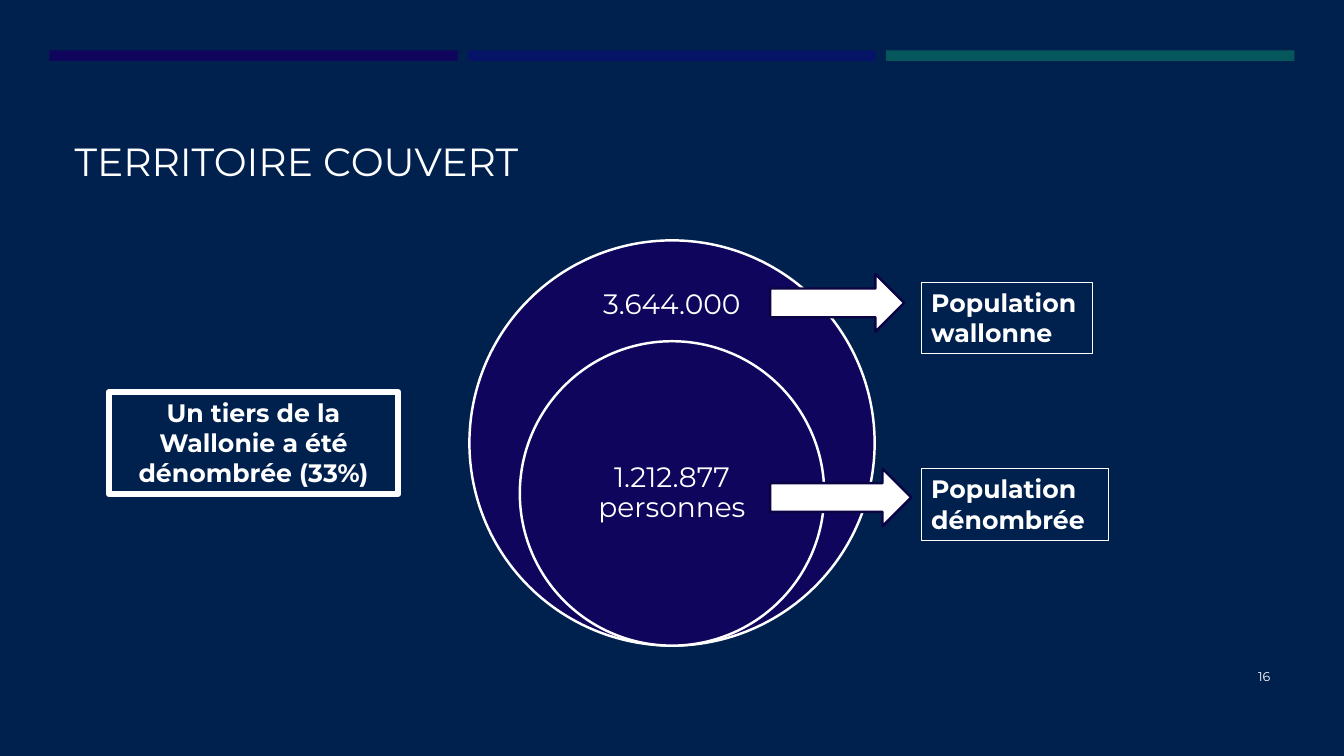
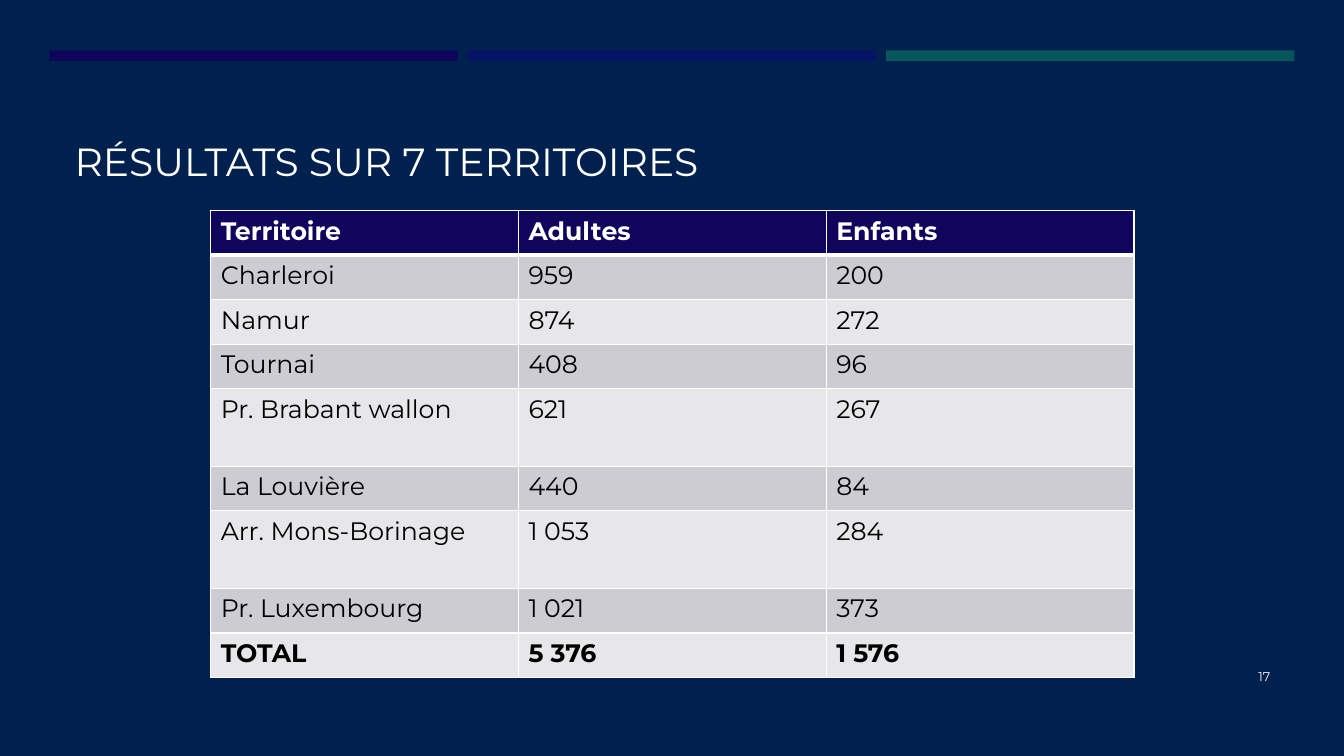
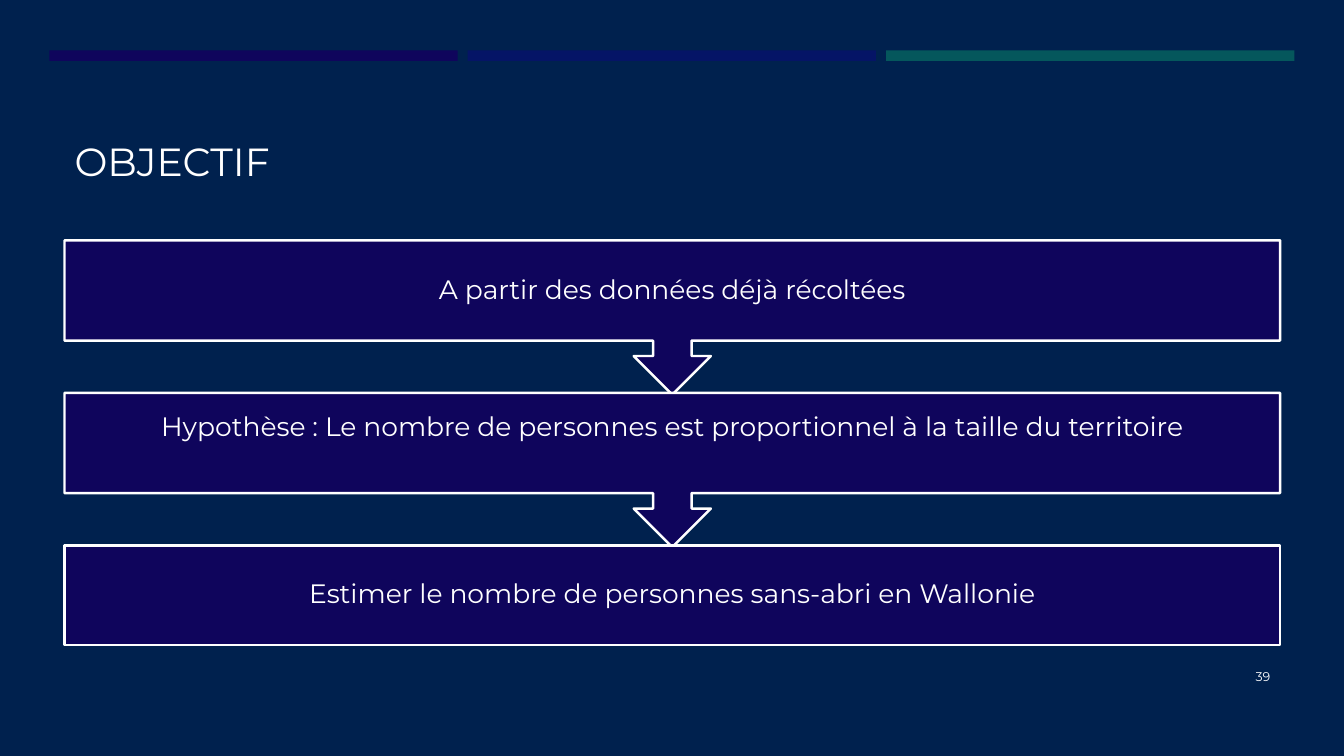
from pptx import Presentation
from pptx.dml.color import RGBColor
from pptx.enum.shapes import MSO_SHAPE
from pptx.enum.text import MSO_ANCHOR, MSO_AUTO_SIZE, PP_ALIGN
from pptx.oxml.ns import qn
from pptx.util import Inches, Pt
from lxml import etree

RECTANGLE, ELLIPSE = MSO_SHAPE.RECTANGLE, MSO_SHAPE.OVAL
RIGHT_ARROW, CALLOUT = MSO_SHAPE.RIGHT_ARROW, MSO_SHAPE.DOWN_ARROW_CALLOUT
TOP, MIDDLE, BOTTOM = MSO_ANCHOR.TOP, MSO_ANCHOR.MIDDLE, MSO_ANCHOR.BOTTOM
LEFT, CENTER, RIGHT = PP_ALIGN.LEFT, PP_ALIGN.CENTER, PP_ALIGN.RIGHT
NO_AUTOFIT = MSO_AUTO_SIZE.NONE

NAVY = RGBColor(0x00, 0x21, 0x4E)
INDIGO = RGBColor(0x0F, 0x05, 0x5C)
DARK_INDIGO = RGBColor(0x0B, 0x04, 0x44)
BLUE = RGBColor(0x05, 0x14, 0x66)
TEAL = RGBColor(0x05, 0x57, 0x5C)
WHITE = RGBColor(0xFF, 0xFF, 0xFF)
BLACK = RGBColor(0x00, 0x00, 0x00)
GREY = RGBColor(0xCC, 0xCC, 0xD2)
LIGHT_GREY = RGBColor(0xE7, 0xE7, 0xEA)

FONT = "Montserrat"
COLUMNS, ROWS = 133.33, 75  # grid of square cells
CELL = Inches(0.1)
MARGIN, CONTENT_WIDTH = 6.4, 120.6
CENTER_COLUMN = COLUMNS / 2


def grid(*lengths):
    """Turn grid columns or rows into slide lengths."""
    return [round(length * CELL) for length in lengths]


class Deck:
    """The shared style and the slide being built."""

    def __init__(self):
        self.deck = Presentation()
        self.deck.slide_width, self.deck.slide_height = grid(COLUMNS, ROWS)
        background = self.deck.slide_master.background.fill
        background.solid()
        background.fore_color.rgb = NAVY
        self.slide = None

    def new_slide(self, title, number):
        self.slide = self.deck.slides.add_slide(self.deck.slide_layouts[5])
        # Three coloured bands
        for index, color in enumerate((INDIGO, BLUE, TEAL)):
            self.shape(RECTANGLE, 4.9 + index * 41.5, 5, 40.5, 1.05, fill=color)
        # Title and page number
        heading = self.slide.shapes.title
        heading.left, heading.top, heading.width, heading.height = grid(
            MARGIN, 7.7, CONTENT_WIDTH, 11.1)
        self.fill_text(heading.text_frame, title, 28, anchor=BOTTOM)
        self.text(str(number), 115.5, 65.1, 11.5, 4, 9, align=RIGHT)

    def fill_text(self, frame, text, size, color=WHITE, bold=False, align=LEFT,
                  anchor=MIDDLE, inset=None, spacing=None):
        frame.word_wrap = True
        frame.auto_size = NO_AUTOFIT
        frame.vertical_anchor = anchor
        if inset is not None:
            (frame.margin_left, frame.margin_top,
             frame.margin_right, frame.margin_bottom) = grid(*[inset] * 4)
        frame.text = text
        for para in frame.paragraphs:
            para.alignment = align
            if spacing:
                para.line_spacing = spacing
            self.style_runs(para, size, color, bold)

    def style_runs(self, para, size, color, bold):
        for span in para.runs:
            span.font.name = FONT
            span.font.size = Pt(size)
            span.font.bold = bold
            span.font.color.rgb = color

    def text(self, text, left, top, width, height, size, **style):
        box = self.slide.shapes.add_textbox(*grid(left, top, width, height))
        self.fill_text(box.text_frame, text, size, **style)

    def shape(self, kind, left, top, width, height, fill=None, line=None,
              weight=1.75):
        shape = self.slide.shapes.add_shape(kind, *grid(left, top, width, height))
        shape.shadow.inherit = False
        if fill is None:
            shape.fill.background()
        else:
            shape.fill.solid()
            shape.fill.fore_color.rgb = fill
        if line is None:
            shape.line.fill.background()
        else:
            shape.line.color.rgb = line
            shape.line.width = Pt(weight)
        return shape

    def label(self, text, left, top, width, height, weight=0.75, align=LEFT):
        box = self.shape(RECTANGLE, left, top, width, height, line=WHITE,
                         weight=weight)
        self.fill_text(box.text_frame, text, 18, bold=True, align=align, anchor=TOP)

    def circle(self, diameter, bottom):
        return self.shape(ELLIPSE, CENTER_COLUMN - diameter / 2,
                          bottom - diameter, diameter, diameter, INDIGO, WHITE)

    def table(self, rows, left, top, width, heights):
        count = len(rows[0])
        table = self.slide.shapes.add_table(
            len(rows), count, *grid(left, top, width, sum(heights))).table
        table.first_row = table.horz_banding = False
        for column in table.columns:
            column.width = grid(width / count)[0]
        for index, (row, height) in enumerate(zip(rows, heights)):
            table.rows[index].height = grid(height)[0]
            header, total = index == 0, index == len(rows) - 1
            fill = INDIGO if header else GREY if index % 2 else LIGHT_GREY
            for column, value in enumerate(row):
                cell = table.cell(index, column)
                self.borders(cell, L=1, R=1, T=3 if index == 1 else 1,
                             B=3 if header else 1)
                cell.fill.solid()
                cell.fill.fore_color.rgb = fill
                cell.text_frame.text = value
                self.style_runs(cell.text_frame.paragraphs[0], 18,
                                WHITE if header else BLACK, header or total)

    def borders(self, cell, **weights):
        properties = cell._tc.get_or_add_tcPr()
        for side, weight in weights.items():
            line = etree.SubElement(properties, qn("a:ln" + side), w=str(Pt(weight)))
            fill = etree.SubElement(line, qn("a:solidFill"))
            etree.SubElement(fill, qn("a:srgbClr"), val=str(WHITE))


def territory_slide(deck):
    deck.new_slide("TERRITOIRE COUVERT", 16)
    # Nested populations
    bottom = 64.05
    deck.circle(40.2, bottom)
    deck.text("3.644.000", 56.1, 26.9, 21.1, 6.8, 20, align=CENTER,
              inset=1.6, spacing=0.9)
    counted = deck.circle(30.2, bottom)
    deck.fill_text(counted.text_frame, "1.212.877 personnes", 20, align=CENTER,
                   inset=1.6, spacing=0.9)
    # Arrows and their labels
    for text, arrow_top, arrow_width, label_top, label_width in (
            ("Population wallonne", 27.2, 13.3, 28, 17),
            ("Population dénombrée", 46.5, 14, 46.5, 18.6)):
        deck.shape(RIGHT_ARROW, 76.4, arrow_top, arrow_width, 5.7, WHITE, DARK_INDIGO)
        deck.label(text, 91.4, label_top, label_width, 7.1)
    # Conclusion
    deck.label("Un tiers de la Wallonie a été dénombrée (33%)",
               10.8, 38.9, 28.7, 10.1, weight=4.5, align=CENTER)


def results_slide(deck):
    deck.new_slide("RÉSULTATS SUR 7 TERRITOIRES", 17)
    rows = (
        ("Territoire", "Adultes", "Enfants"),
        ("Charleroi", "959", "200"),
        ("Namur", "874", "272"),
        ("Tournai", "408", "96"),
        ("Pr. Brabant wallon", "621", "267"),
        ("La Louvière", "440", "84"),
        ("Arr. Mons-Borinage", "1 053", "284"),
        ("Pr. Luxembourg", "1 021", "373"),
        ("TOTAL", "5 376", "1 576"),
    )
    tall_rows = (4, 6)
    heights = [7.7 if index in tall_rows else 4.42 for index in range(len(rows))]
    deck.table(rows, 20.9, 20.9, 91.6, heights)


def objective_slide(deck):
    deck.new_slide("OBJECTIF", 39)
    first_top, step = 23.85, 15.13
    # Steps, with the first two pointing to the next
    for index, (text, kind, height, lift) in enumerate((
            ("A partir des données déjà récoltées", CALLOUT, 15.3, 0),
            ("Hypothèse : Le nombre de personnes est proportionnel à la taille "
             "du territoire", CALLOUT, 15.3, 2.9),
            ("Estimer le nombre de personnes sans-abri en Wallonie",
             RECTANGLE, 9.9, 0))):
        box = deck.shape(kind, MARGIN, first_top + index * step, CONTENT_WIDTH,
                         height, INDIGO, WHITE)
        deck.fill_text(box.text_frame, text, 19, align=CENTER, inset=1.5,
                       spacing=0.9)
        box.text_frame.margin_bottom = grid(1.5 + lift)[0]


def main():
    deck = Deck()
    territory_slide(deck)
    results_slide(deck)
    objective_slide(deck)
    deck.deck.save("out.pptx")


if __name__ == "__main__":
    main()
